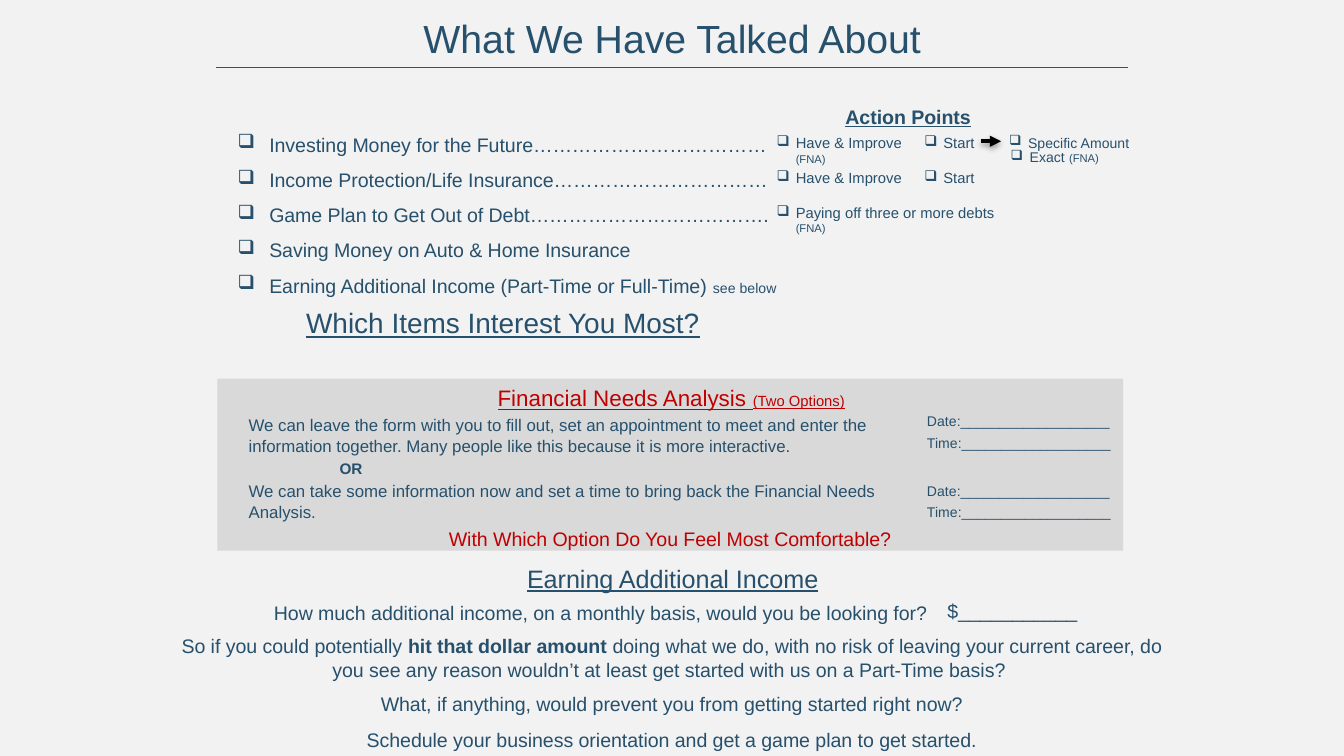
from lxml import etree
from pptx import Presentation
from pptx.dml.color import RGBColor
from pptx.enum.shapes import MSO_CONNECTOR as Connector, MSO_SHAPE as Shape
from pptx.enum.text import MSO_ANCHOR as Anchor, MSO_AUTO_SIZE as AutoSize, PP_ALIGN as Align
from pptx.oxml.ns import qn
from pptx.util import Cm, Pt

NAVY = RGBColor(0x26, 0x50, 0x6C)
RULE_BLUE = RGBColor(0x34, 0x52, 0x6F)
RED = RGBColor(0xC0, 0x00, 0x00)
BLACK = RGBColor(0x00, 0x00, 0x00)
PANEL_GREY = RGBColor(0xD9, 0xD9, 0xD9)
PAGE_GREY = RGBColor(0xF2, 0xF2, 0xF2)
FONT = "Arial"

TOPICS = [
    [("Investing Money for the Future………………………………", 10.5)],
    [("Income Protection/Life Insurance……………………………", 10.5)],
    [("Game Plan to Get Out of Debt……………………………….", 10.5)],
    [("Saving Money on Auto & Home Insurance", 10.5)],
    [("Earning Additional Income (Part-Time or Full-Time) ", 10.5), ("see below", 7.5)],
]
HAVE = ("Have & Improve", 7.9)
START = ("Start", 7.9)
FNA = ("(FNA)", 6)
ACTION_POINTS = [
    ((14.43, 2.41, 3.2, 0.84), [("Have & Improve ", 7.9), FNA], True),
    ((17.22, 2.41, 1.55, 0.58), [START], True),
    ((14.43, 3.07, 2.97, 0.58), [HAVE], True),
    ((17.22, 3.07, 1.55, 0.58), [START], True),
    ((14.43, 3.73, 4.95, 0.84), [("Paying off three or more debts ", 7.9), FNA], True),
    ((18.82, 2.41, 2.87, 0.58), [("Specific Amount", 7.5)], False),
    ((18.85, 2.67, 2.18, 0.58), [("Exact", 7.5), (" ", 7.9), FNA], False),
]
OPTIONS = [
    ((4.45, 7.72, 12.78, 1.02),
     "We can leave the form with you to fill out, set an appointment to meet and enter the "
     "information together. Many people like this because it is more interactive."),
    ((4.45, 8.97, 12.45, 1.02),
     "We can take some information now and set a time to bring back the Financial Needs Analysis."),
]


def write_runs(paragraph, runs, color, bold=False, underline=False):
    for text, size, *emphasis in runs:
        run = paragraph.add_run()
        run.text = text
        run.font.name = FONT
        run.font.size = Pt(size)
        run.font.color.rgb = color
        run.font.bold = bold or bool(emphasis)
        run.font.underline = underline


def add_bullet(paragraph, indent):
    properties = paragraph._p.get_or_add_pPr()
    properties.set("marL", str(Cm(indent)))
    properties.set("indent", str(-Cm(indent)))
    etree.SubElement(properties, qn("a:buChar"), char="❑")


def add_text(shapes, place, paragraphs, color=NAVY, align=Align.LEFT, bullet=0,
             spacing=None, wrap=True, bold=False, underline=False):
    frame = shapes.add_textbox(*map(Cm, place)).text_frame
    frame.word_wrap = wrap
    frame.auto_size = AutoSize.SHAPE_TO_FIT_TEXT
    for index, runs in enumerate(paragraphs):
        paragraph = frame.add_paragraph() if index else frame.paragraphs[0]
        paragraph.alignment = align
        if spacing:
            paragraph.line_spacing = spacing
        if bullet:
            add_bullet(paragraph, bullet)
        write_runs(paragraph, runs, color, bold, underline)


def add_centered(shapes, place, *runs, **style):
    add_text(shapes, place, [runs], align=Align.CENTER, **style)


def add_line(shapes, ends, color, width):
    line = shapes.add_connector(Connector.STRAIGHT, *map(Cm, ends))
    line.line.color.rgb = color
    line.line.width = Pt(width)
    effects = etree.SubElement(line._element.spPr, qn("a:effectLst"))
    return line, effects


def add_arrow(shapes, ends):
    arrow, effects = add_line(shapes, ends, BLACK, 2)
    etree.SubElement(arrow.line._get_or_add_ln(), qn("a:tailEnd"), type="triangle")
    shadow = etree.SubElement(effects, qn("a:outerShdw"), blurRad=str(Pt(3.1)),
                              dist=str(Pt(1.6)), dir="5400000", rotWithShape="0")
    shade = etree.SubElement(shadow, qn("a:srgbClr"), val=str(BLACK))
    etree.SubElement(shade, qn("a:alpha"), val="38000")


def add_title(slide):
    title = slide.shapes.title
    title.left, title.top, title.width, title.height = map(Cm, (3.18, 0, 19.05, 1.55))
    frame = title.text_frame
    frame.vertical_anchor = Anchor.MIDDLE
    frame.auto_size = AutoSize.NONE
    paragraph = frame.paragraphs[0]
    paragraph.alignment = Align.CENTER
    paragraph.line_spacing = 0.85
    write_runs(paragraph, [("What We Have Talked About", 21)], NAVY)


def add_panel(shapes):
    panel = shapes.add_shape(Shape.RECTANGLE, *map(Cm, (4.11, 7.16, 17.12, 3.25)))
    panel.shadow.inherit = False
    panel.fill.solid()
    panel.fill.fore_color.rgb = PANEL_GREY
    panel.line.fill.background()


def add_appointment(shapes, top):
    group = shapes.add_group_shape()
    for row, label in enumerate(("Date", "Time")):
        add_text(group.shapes, (17.27, top + row * 0.41, 4.19, 0.58),
                 [[(label + ":" + "_" * 19, 7.5)]])


def add_topics(shapes):
    add_text(shapes, (4.24, 2.16, 11.02, 3.53), TOPICS, bullet=0.6, spacing=1.5)
    add_centered(shapes, (15.44, 1.85, 3.45, 0.71), ("Action Points", 10.5),
                 bold=True, underline=True)
    for place, runs, wrap in ACTION_POINTS:
        add_text(shapes, place, [runs], bullet=0.36, wrap=wrap)
    add_arrow(shapes, (18.54, 2.67, 18.92, 2.67))
    add_centered(shapes, (5.16, 5.66, 8.69, 0.89),
                 ("Which Items Interest You Most?", 15), underline=True)


def add_analysis(shapes):
    add_centered(shapes, (8.43, 7.14, 8.51, 0.76), ("Financial Needs Analysis ", 12),
                 ("(Two Options)", 7.9), color=RED, underline=True)
    for place, option in OPTIONS:
        add_text(shapes, place, [[(option, 9)]])
    for top in (7.67, 8.99):
        add_appointment(shapes, top)
    add_centered(shapes, (6.05, 8.56, 1.17, 0.61), ("OR", 8.2), bold=True)
    add_centered(shapes, (7.54, 9.83, 10.26, 0.71),
                 ("With Which Option Do You Feel Most Comfortable?", 10.5), color=RED)


def add_income(shapes):
    add_centered(shapes, (8.46, 10.52, 8.51, 0.84),
                 ("Earning Additional Income", 13.5), underline=True)
    question = shapes.add_group_shape().shapes
    add_centered(question, (3.18, 11.23, 16.36, 0.71),
                 ("How much additional income, on a monthly basis, would you be looking for?", 10.5))
    add_centered(question, (17.42, 11.2, 3.43, 0.71), ("$" + "_" * 11, 10.5))
    add_centered(shapes, (3.18, 11.86, 19.05, 1.14),
                 ("So if you could potentially ", 10.5),
                 ("hit that dollar amount ", 10.5, "bold"),
                 ("doing what we do, with no risk of leaving your current career, do you see any "
                  "reason wouldn’t at least get started with us on a Part-Time basis? ", 10.5))
    add_centered(shapes, (3.18, 12.95, 19.05, 0.71),
                 ("What, if anything, would prevent you from getting started right now?", 10.5))
    add_centered(shapes, (3.18, 13.64, 19.05, 0.71),
                 ("Schedule your business orientation and get a game plan to get started.", 10.5))


def main():
    deck = Presentation()
    deck.slide_width, deck.slide_height = Cm(25.4), Cm(14.29)
    slide = deck.slides.add_slide(deck.slide_layouts[5])
    slide.background.fill.solid()
    slide.background.fill.fore_color.rgb = PAGE_GREY
    shapes = slide.shapes
    add_panel(shapes)
    add_title(slide)
    add_topics(shapes)
    add_analysis(shapes)
    add_income(shapes)
    add_line(shapes, (4.09, 1.27, 21.31, 1.27), RULE_BLUE, 0.75)
    deck.save("out.pptx")


if __name__ == "__main__":
    main()
